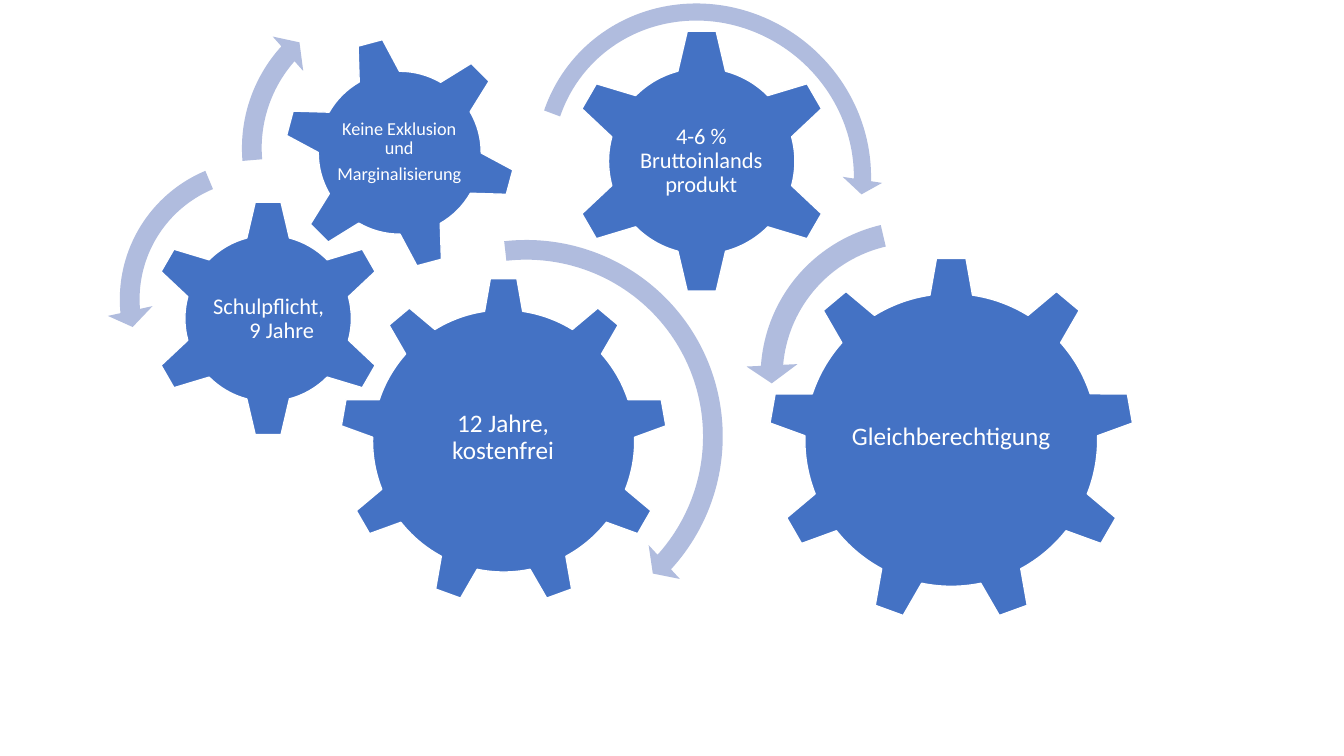
from pptx import Presentation
from pptx.dml.color import RGBColor
from pptx.enum.shapes import MSO_SHAPE
from pptx.enum.text import MSO_ANCHOR, PP_ALIGN
from pptx.util import Inches, Pt

GEAR_6 = MSO_SHAPE.GEAR_6
GEAR_9 = MSO_SHAPE.GEAR_9
CLOCKWISE = MSO_SHAPE.CIRCULAR_ARROW
COUNTERCLOCKWISE = MSO_SHAPE.LEFT_CIRCULAR_ARROW
MIDDLE = MSO_ANCHOR.MIDDLE
CENTER = PP_ALIGN.CENTER

BLANK_LAYOUT = 6
FONT = "Calibri"
GEAR_BLUE = "4472C4"
ARROW_BLUE = "B0BCDE"
WHITE = "FFFFFF"

# Arrow thickness %, head angle, end angle, start angle, head width %
LEFT_SWEEP = (6.5, 7.17, 174.82, 247.3, 7.5)


def color(hex_code):
    return RGBColor.from_string(hex_code)


def add_filled(group, preset, box, fill, rotation):
    shape = group.shapes.add_shape(preset, *map(Inches, box))
    shape.shadow.inherit = False
    shape.fill.solid()
    shape.fill.fore_color.rgb = color(fill)
    shape.rotation = rotation
    return shape


def add_gear(group, preset, left, top, size, rotation=0):
    gear = add_filled(group, preset, (left, top, size, size), GEAR_BLUE, rotation)
    gear.line.color.rgb = color(WHITE)
    gear.line.width = Pt(1)


def add_label(group, box, lines, size, gap=0, last_indent=0):
    label = group.shapes.add_textbox(*map(Inches, box))
    frame = label.text_frame
    frame.word_wrap = True
    frame.vertical_anchor = MIDDLE
    inset = Inches(0.03 if size == 18 else 0.02)
    frame.margin_left = frame.margin_right = inset
    frame.margin_top = frame.margin_bottom = inset
    frame.text = "\n".join(lines)
    for paragraph in frame.paragraphs:
        paragraph.alignment = CENTER
        paragraph.line_spacing = 0.9
        paragraph.space_after = Pt(0)
        paragraph.font.name = FONT
        paragraph.font.size = Pt(size)
        paragraph.font.color.rgb = color(WHITE)
    for paragraph in frame.paragraphs[:-1]:
        paragraph.space_after = Pt(gap)
    if last_indent:
        properties = frame.paragraphs[-1]._p.get_or_add_pPr()
        properties.set("marL", str(Inches(last_indent)))


def add_turn_arrow(group, preset, box, sweep, rotation=0):
    arrow = add_filled(group, preset, box, ARROW_BLUE, rotation)
    arrow.line.fill.background()
    thickness, head, end, start, head_width = sweep
    # Angles are stored in 1/60000 degree, scaled here by 100000
    values = (thickness / 100, head * 0.6, end * 0.6, start * 0.6, head_width / 100)
    for index, value in enumerate(values):
        arrow.adjustments[index] = value


def add_school_gears(slide):
    school = slide.shapes.add_group_shape()
    add_gear(school, GEAR_9, 3.37, 2.75, 3.25)
    add_label(school, (4.02, 3.51, 1.94, 1.67), ["12 Jahre, kostenfrei"], 18)
    add_gear(school, GEAR_6, 1.48, 1.98, 2.36)
    add_label(school, (2.08, 2.58, 1.17, 1.17), ["Schulpflicht,", "9 Jahre"], 16,
              last_indent=0.26)
    add_gear(school, GEAR_6, 2.81, 0.36, 2.31, rotation=345)
    add_label(school, (3.31, 0.86, 1.3, 1.3),
              ["Keine Exklusion und", "Marginalisierung"], 13, gap=4.5)
    add_turn_arrow(school, CLOCKWISE, (3.14, 2.25, 4.16, 4.16),
                   (4.7, 4.98, 42.32, 263.55, 5.5))
    add_turn_arrow(school, COUNTERCLOCKWISE, (1.06, 1.46, 3.02, 3.02), LEFT_SWEEP)
    add_turn_arrow(school, CLOCKWISE, (2.27, -0.16, 3.26, 3.26),
                   (6, 6.57, 221.9, 175.14, 7))


def add_equality_gears(slide):
    equality = slide.shapes.add_group_shape()
    add_gear(equality, GEAR_9, 7.62, 2.55, 3.63)
    add_label(equality, (8.35, 3.4, 2.17, 1.87), ["Gleichberechtigung"], 18)
    add_gear(equality, GEAR_6, 5.64, 0.28, 2.64)
    add_label(equality, (6.3, 0.95, 1.31, 1.3), ["4-6 % Bruttoinlandsprodukt"], 16)
    add_turn_arrow(equality, CLOCKWISE, (5.24, -0.12, 3.47, 3.61),
                   (4.9, 5.21, 54.31, 251.17, 5.7), rotation=309.3)
    add_turn_arrow(equality, COUNTERCLOCKWISE, (7.4, 2.05, 3.37, 3.37), LEFT_SWEEP,
                   rotation=9.6)


def main():
    presentation = Presentation()
    presentation.slide_width = Inches(13.33)
    presentation.slide_height = Inches(7.5)
    slide = presentation.slides.add_slide(presentation.slide_layouts[BLANK_LAYOUT])
    slide.background.fill.solid()
    slide.background.fill.fore_color.rgb = color(WHITE)
    add_school_gears(slide)
    add_equality_gears(slide)
    presentation.save("out.pptx")


if __name__ == "__main__":
    main()
